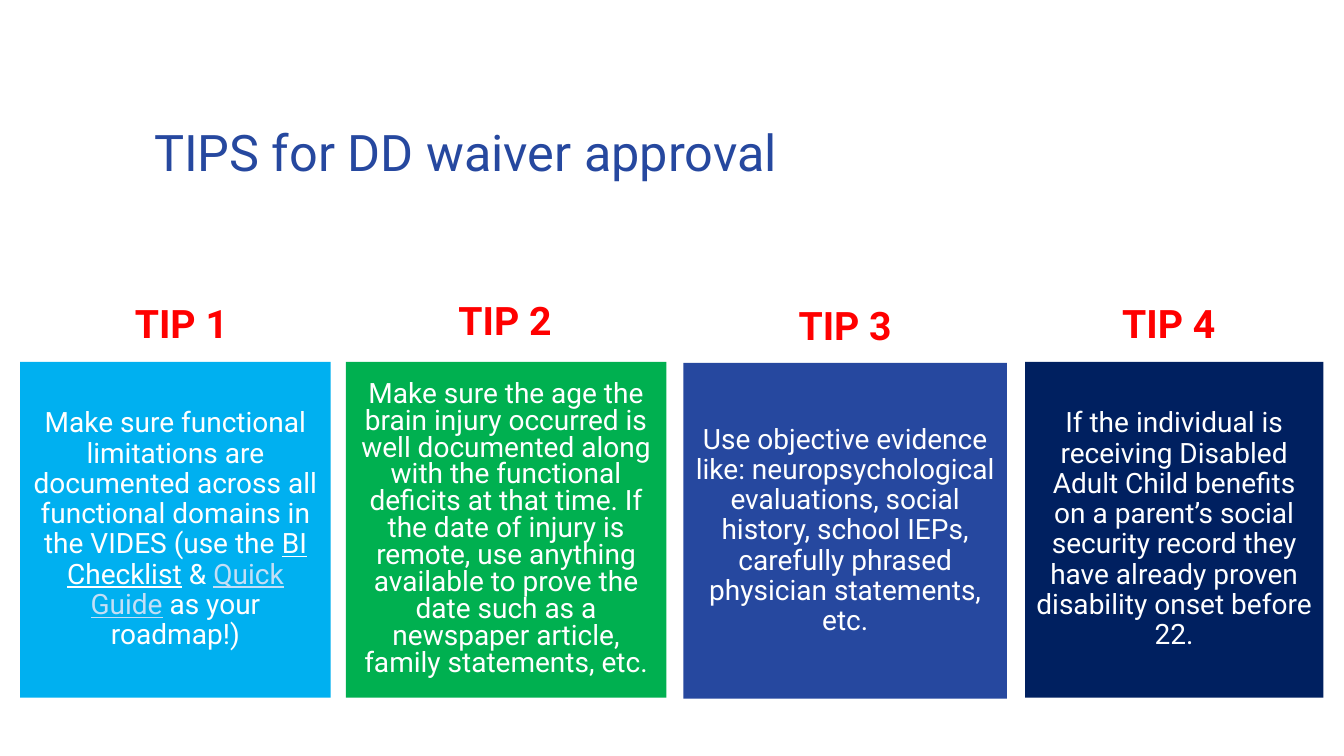
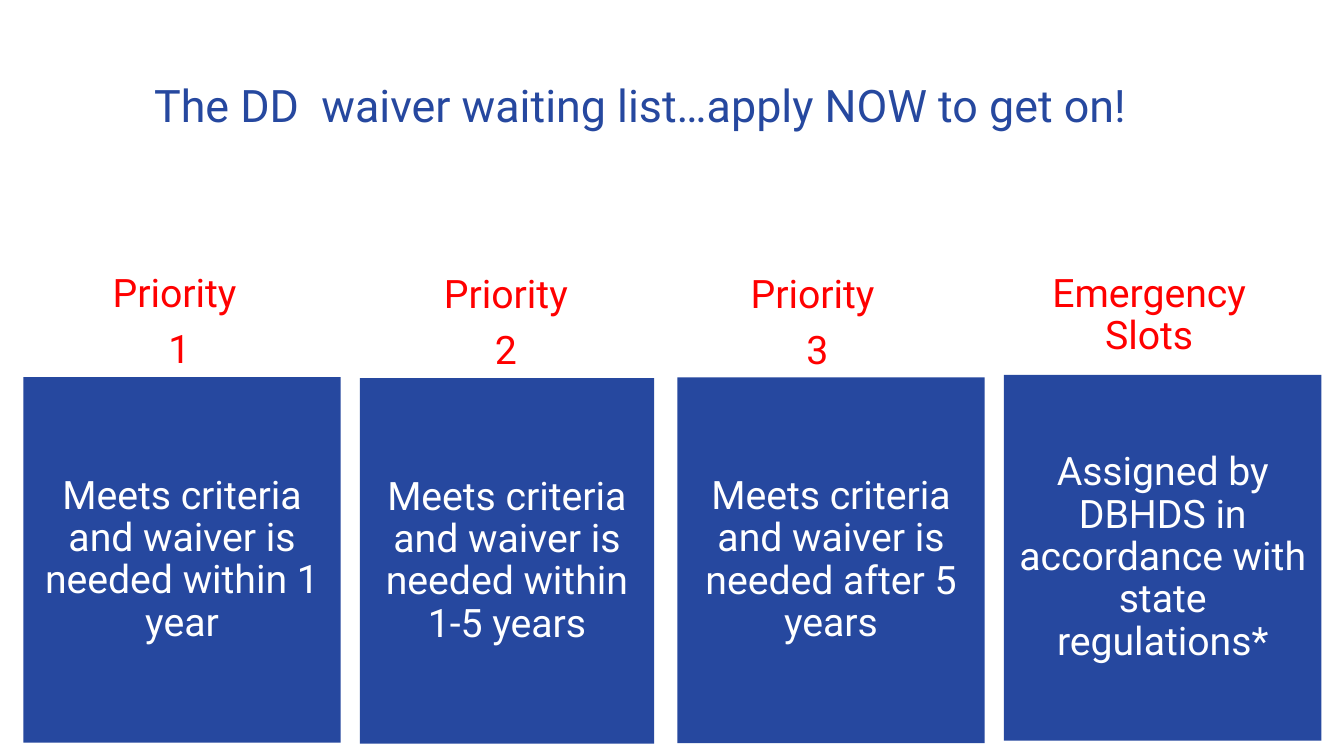
from pptx import Presentation
from pptx.dml.color import RGBColor
from pptx.enum.shapes import MSO_SHAPE as Preset
from pptx.enum.text import MSO_ANCHOR as Anchor, PP_ALIGN as Align
from pptx.util import Pt

COLORS = {
    "blue": "26489F", "sky": "00B0F0", "green": "00B050", "navy": "002060",
    "red": "FF0000", "white": "FFFFFF", "link": "C3DFF6",
}
FONT = "Roboto"
LABEL_HEIGHT = 159.1

TIP_LABELS = [  # left, top, width, lines
    (46.8, 190.8, 165.6, ["TIP 1"]),
    (257, 188.6, 207.4, ["TIP 2"]),
    (478.8, 192.2, 249.8, ["TIP 3"]),
    (709.9, 190.8, 249.8, ["TIP 4"]),
]
TIP_CARDS = [  # left, top, width, fill, line spacing, spans
    (14.4, 258.5, 221.8, "sky", 0.9, [
        ("Make sure functional limitations are documented across all functional "
         "domains in the VIDES (use the ", {}),
        ("BI Checklist", {"underline": True}),
        (" & ", {}),
        ("Quick Guide", {"underline": True, "color": "link"}),
        (" as your roadmap!)", {})]),
    (247, 258.5, 229, "green", 0.8, [
        ("Make sure the age the brain injury occurred is well documented along with "
         "the functional deficits at that time. If the date of injury is remote, use "
         "anything available to prove the date such as a newspaper article, family "
         "statements, etc.", {})]),
    (488.2, 259.2, 231.1, "blue", 0.9, [
        ("Use objective evidence like: neuropsychological evaluations, social history, "
         "school IEPs, carefully phrased physician statements, etc.", {})]),
    (732.2, 258.5, 213.1, "navy", 0.9, [
        ("If the individual is receiving Disabled Adult Child benefits on a parent’s "
         "social security record they have already proven disability onset before "
         "22.", {})]),
]
PRIORITY_LABELS = [
    (45.4, 168.5, 165.6, ["Priority ", "1"]),
    (285.8, 169.2, 165.6, ["Priority", "2"]),
    (501.1, 169.2, 165.6, ["Priority ", "3"]),
    (709.9, 168.5, 221.8, ["Emergency Slots"]),
]
PRIORITY_CARDS = [  # left, top, width, text
    (16.6, 269.3, 226.8, "Meets criteria and waiver is needed within 1 year"),
    (257, 270, 210.2, "Meets criteria and waiver is needed within 1-5 years"),
    (483.8, 269.6, 219.6, "Meets criteria and waiver is needed after 5 years"),
    (717.1, 267.8, 226.8, "Assigned by DBHDS in accordance with state regulations*"),
]


def rgb(name):
    return RGBColor.from_string(COLORS[name])


def write(box, paragraphs, look, anchor, align=Align.CENTER, spacing=0.9):
    """Fill a box; each paragraph is a list of (text, changes to look)."""
    frame = box.text_frame
    frame.word_wrap = True
    frame.vertical_anchor = anchor
    for number, spans in enumerate(paragraphs):
        para = frame.add_paragraph() if number else frame.paragraphs[0]
        para.alignment = align
        para.line_spacing = spacing
        para.space_before = Pt(10 if number else 0)
        for text, changes in spans:
            span = para.add_run()
            span.text = text
            values = {"name": FONT, **look, **changes}
            span.font.color.rgb = rgb(values.pop("color"))
            for key, value in values.items():
                setattr(span.font, key, value)


def add_title(page, text, top, height, size, anchor):
    box = page.shapes.add_textbox(Pt(103), Pt(top), Pt(780), Pt(height))
    look = {"size": Pt(size), "color": "blue"}
    write(box, [[(text, {})]], look, anchor, Align.LEFT)


def add_preset(page, preset, left, top, width, height, fill=None):
    """Add a shape without line or shadow, filled only if a colour is named."""
    shape = page.shapes.add_shape(preset, Pt(left), Pt(top), Pt(width), Pt(height))
    shape.shadow.inherit = False
    shape.line.fill.background()
    if fill:
        shape.fill.solid()
        shape.fill.fore_color.rgb = rgb(fill)
    else:
        shape.fill.background()
    return shape


def add_label(page, left, top, width, lines, bold=False):
    label = add_preset(page, Preset.OVAL, left, top, width, LABEL_HEIGHT)
    look = {"size": Pt(28), "color": "red", "bold": bold}
    write(label, [[(line, {})] for line in lines], look, Anchor.TOP)
    return label


def add_card(page, left, top, width, height, fill, spans, size, spacing=0.9):
    card = add_preset(page, Preset.RECTANGLE, left, top, width, height, fill)
    look = {"size": Pt(size), "color": "white"}
    write(card, [spans], look, Anchor.MIDDLE, spacing=spacing)


def build_tips(page):
    add_title(page, "TIPS for DD waiver approval", 87.8, 79.2, 36, Anchor.TOP)
    for label in TIP_LABELS:
        add_label(page, *label, bold=True)
    for left, top, width, fill, spacing, spans in TIP_CARDS:
        add_card(page, left, top, width, 239.8, fill, spans, 20, spacing)


def build_waiting_list(page):
    add_title(page, "The DD  waiver waiting list…apply NOW to get on!",
              25.2, 104.4, 32, Anchor.MIDDLE)
    labels = [add_label(page, *label) for label in PRIORITY_LABELS]
    second = labels[1].text_frame
    second.margin_left, second.margin_right = Pt(0), Pt(14.4)
    for left, top, width, text in PRIORITY_CARDS:
        add_card(page, left, top, width, 261.2, "blue", [(text, {})], 28)


def main():
    deck = Presentation()
    deck.slide_width, deck.slide_height = Pt(960), Pt(540)
    for build in (build_tips, build_waiting_list):
        build(deck.slides.add_slide(deck.slide_layouts[6]))
    deck.save("out.pptx")


if __name__ == "__main__":
    main()
